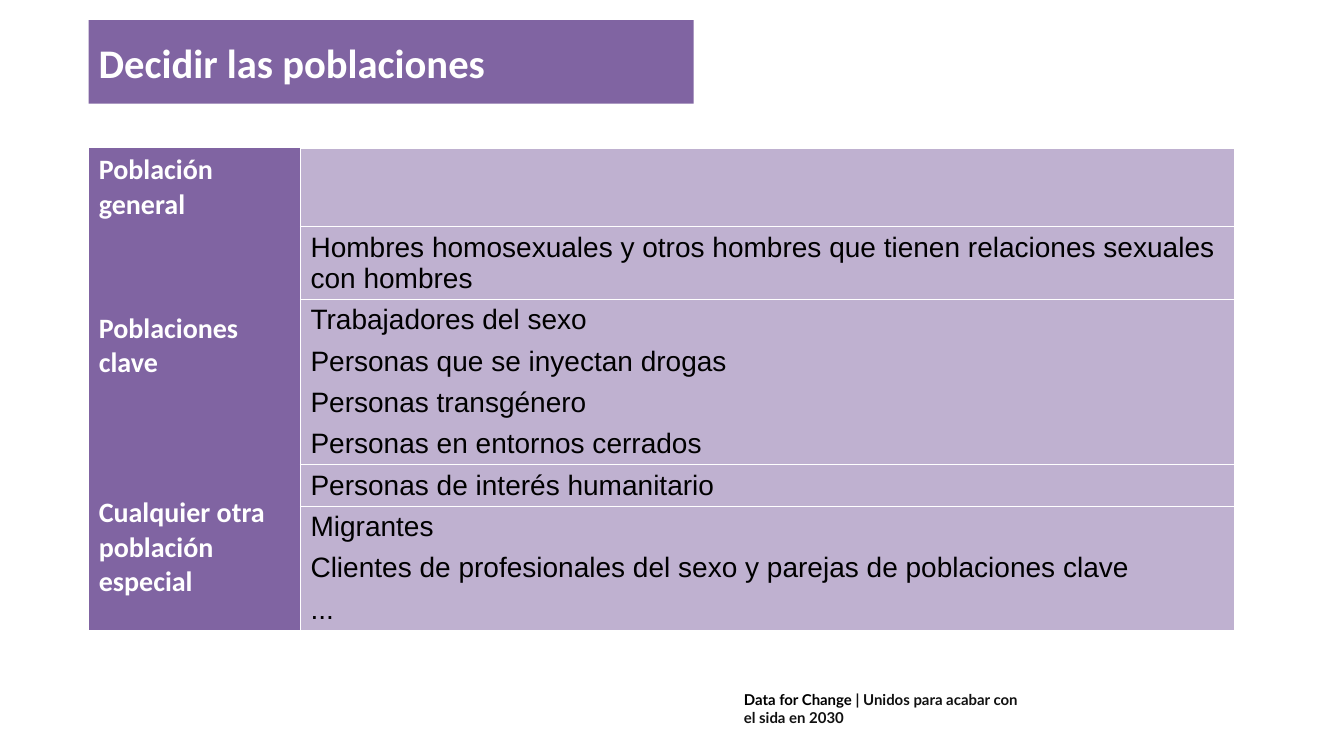
"""Build the slide that lists the populations to decide on."""
from lxml import etree
from pptx import Presentation
from pptx.dml.color import RGBColor
from pptx.enum.shapes import MSO_SHAPE
from pptx.enum.text import MSO_ANCHOR, PP_ALIGN
from pptx.oxml.ns import qn
from pptx.util import Inches, Pt

RECT = MSO_SHAPE.RECTANGLE
MIDDLE = MSO_ANCHOR.MIDDLE
LEFT = PP_ALIGN.LEFT
PURPLE = RGBColor(0x80, 0x64, 0xA2)
LILAC = RGBColor(0xBF, 0xB1, 0xD0)
WHITE = RGBColor(255, 255, 255)
BLACK = RGBColor(0, 0, 0)
INK = RGBColor(0x11, 0x11, 0x11)
PLAIN = "{2D5ABB26-0587-4C30-8999-92F81FD0307C}"
EDGE = 0.88
COLS = [2.1, 9.26]
ROWS = [0.78, 0.71] + [0.41] * 8
GROUPS = [
    ("Población general", [""]),
    ("Poblaciones clave", [
        "Hombres homosexuales y otros hombres que tienen relaciones sexuales con hombres",
        "Trabajadores del sexo",
        "Personas que se inyectan drogas",
        "Personas transgénero",
        "Personas en entornos cerrados",
    ]),
    ("Cualquier otra población especial", [
        "Personas de interés humanitario",
        "Migrantes",
        "Clientes de profesionales del sexo y parejas de poblaciones clave",
        "...",
    ]),
]


def style(para, name, size, color, bold):
    font = para.font
    font.name, font.size, font.bold = name, Pt(size), bold
    font.color.rgb = color


def paint(cell, color, sides):
    props = cell._tc.get_or_add_tcPr()
    for side in sides:
        line = etree.SubElement(props, qn("a:ln" + side), w=str(Pt(1)))
        fill = etree.SubElement(line, qn("a:solidFill"))
        etree.SubElement(fill, qn("a:srgbClr"), val=str(WHITE))
    cell.fill.solid()
    cell.fill.fore_color.rgb = color


deck = Presentation()
deck.slide_width, deck.slide_height = Inches(13.33), Inches(7.5)
slide = deck.slides.add_slide(deck.slide_layouts[6])

title = slide.shapes.add_shape(RECT, Inches(EDGE), Inches(0.2), Inches(6), Inches(0.83))
title.shadow.inherit = False
title.fill.solid()
title.fill.fore_color.rgb = PURPLE
title.line.fill.background()
title.text_frame.vertical_anchor = MIDDLE
title.text_frame.text = "Decidir las poblaciones"
head = title.text_frame.paragraphs[0]
head.alignment = LEFT
style(head, "Calibri", 29, WHITE, True)

frame = slide.shapes.add_table(
    len(ROWS), len(COLS), Inches(EDGE), Inches(1.47), Inches(sum(COLS)), Inches(sum(ROWS)))
table = frame.table
table.first_row = table.horz_banding = False
table._tbl.find(".//" + qn("a:tableStyleId")).text = PLAIN
for col, width in zip(table.columns, COLS):
    col.width = Inches(width)
for row, height in zip(table.rows, ROWS):
    row.height = Inches(height)

top = 0
for label, items in GROUPS:
    end = top + len(items) - 1
    for num, item in enumerate(items, top):
        paint(table.cell(num, 0), PURPLE, "R")
        cell = table.cell(num, 1)
        sides = "L" + "T" * (num == top) + "B" * (num == end)
        paint(cell, LILAC, sides)
        cell.text = item
        style(cell.text_frame.paragraphs[0], "Arial", 20, BLACK, False)
    group = table.cell(top, 0)
    if end > top:
        group.merge(table.cell(end, 0))
    group.text = label
    group.vertical_anchor = MIDDLE
    style(group.text_frame.paragraphs[0], "Calibri", 20, WHITE, True)
    top = end + 1

foot = slide.shapes.add_textbox(Inches(7.28), Inches(6.8), Inches(3.06), Inches(0.28))
foot.text_frame.word_wrap = True
note = foot.text_frame.paragraphs[0]
style(note, "Lato", 10.7, INK, True)
for text, color in [("Data for Change", BLACK), (" | Unidos para acabar con el sida en 2030", INK)]:
    run = note.add_run()
    run.text = text
    run.font.color.rgb = color

deck.save("out.pptx")
